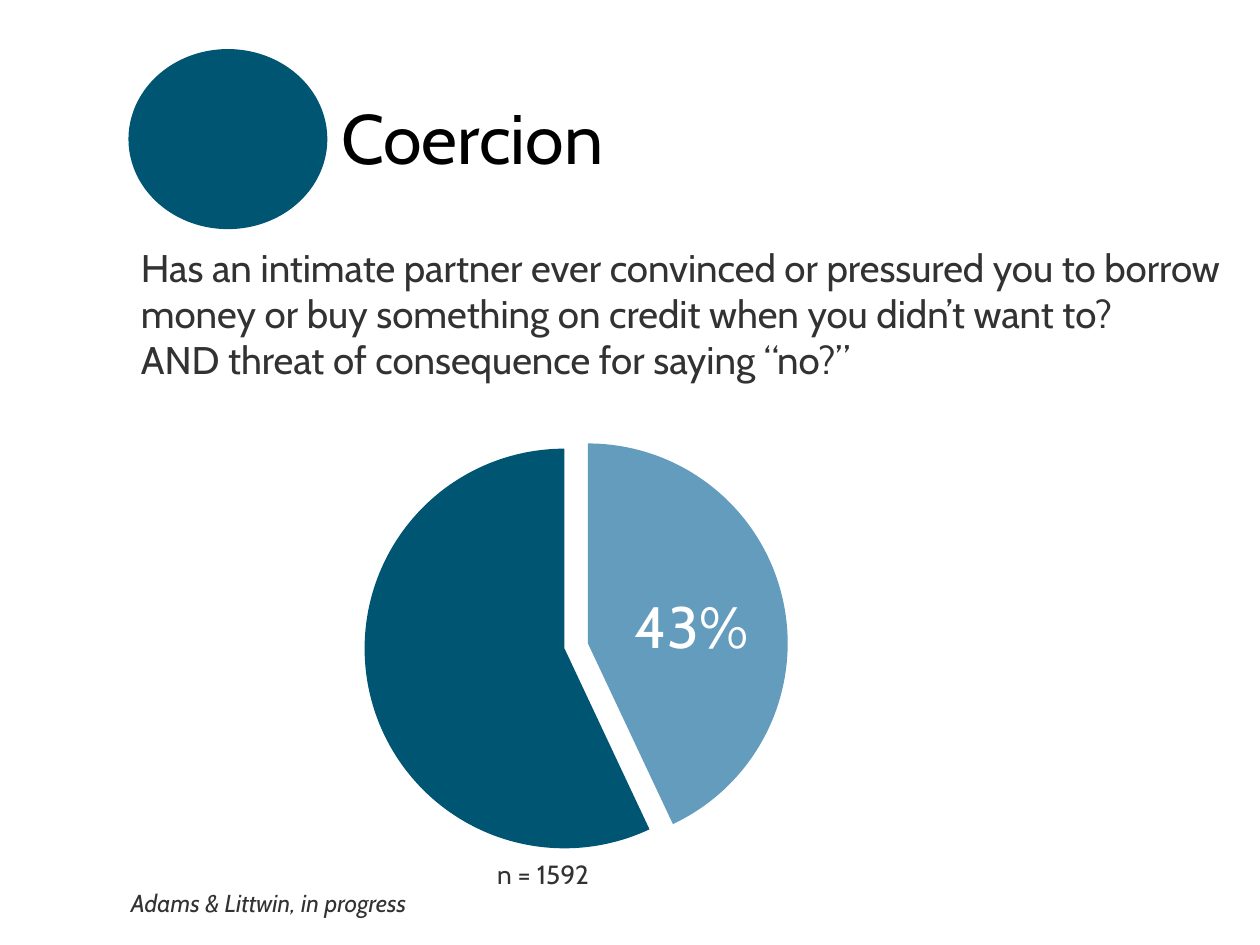
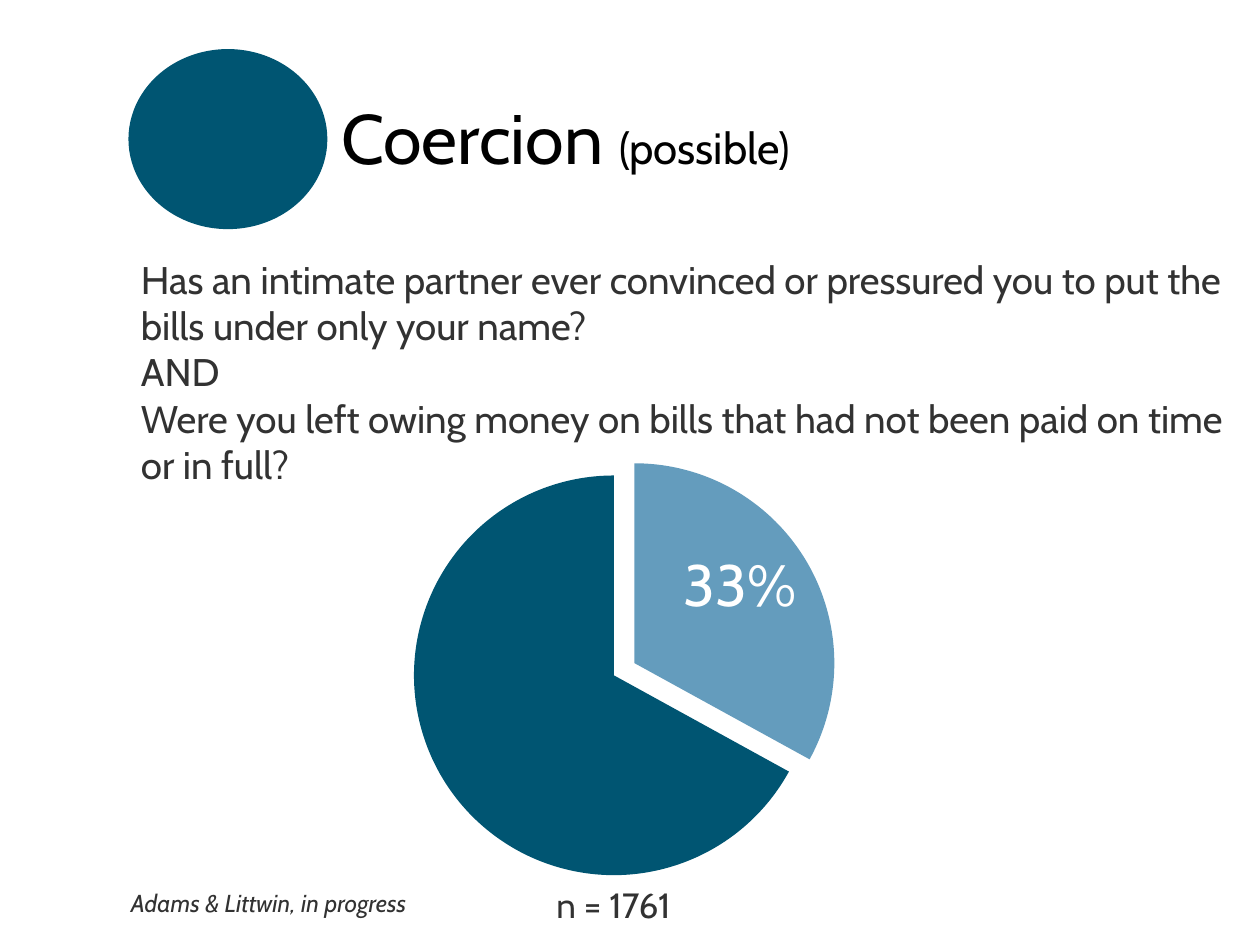
from lxml import etree
from pptx import Presentation
from pptx.chart import data
from pptx.dml import color
from pptx.enum import chart as charts, shapes, text
from pptx.oxml import parse_xml
from pptx.oxml import ns
from pptx.util import Cm, Pt

COLORS = {"circle": "005572", "slice": "649CBD", "title": "000000",
          "body": "323232", "label": "FFFFFF"}
FONT = "Cabin"
FRAME = {"word_wrap": True, "auto_size": text.MSO_AUTO_SIZE.NONE,
         "margin_left": Cm(0.25), "margin_right": Cm(0.25),
         "margin_top": Cm(0.13), "margin_bottom": Cm(0.13)}
HEADER_BOX = (2.59, 0.99, 20.57, 3.63)
SOURCE_BOX = (2.39, 17.78, 17.15, 0.86)
SOURCE = "Adams & Littwin, in progress"
EXPLOSION = 12
PLOT_SHARE = {"w": 0.585, "h": 0.92}

SLIDES = [
    {"title": [("Coercion", 40)],
     "question": ["Has an intimate partner ever convinced or pressured you to borrow "
                  "money or buy something on credit when you didn’t want to?",
                  "AND threat of consequence for saying “no?”"],
     "question_box": (2.59, 4.78, 22.33, 3.07),
     "chart_box": (4.95, 8.59, 13.79, 8.76),
     "percent": 43, "percent_offset": (6.91, 3.17),
     "sample": "n = 1592", "sample_size": 15, "sample_offset": (3.79, 8.58)},
    {"title": [("Coercion ", 40), ("(possible)", 25)],
     "question": ["Has an intimate partner ever convinced or pressured you to put the "
                  "bills under only your name?",
                  "AND",
                  "Were you left owing money on bills that had not been paid on time "
                  "or in full?"],
     "question_box": (2.59, 5.03, 22.33, 4.95),
     "chart_box": (5.89, 8.99, 13.79, 8.76),
     "percent": 33, "percent_offset": (6.94, 1.93),
     "sample": "n = 1761", "sample_size": 20, "sample_offset": (4.27, 8.69)},
]


def apply_format(target, values):
    """Set each named attribute of the target."""
    for name, value in values.items():
        setattr(target, name, value)


def place(shape, box):
    """Move a shape to a box given in centimetres."""
    apply_format(shape, dict(zip(("left", "top", "width", "height"), map(Cm, box))))


def fill_solid(fill, name):
    """Fill with a named colour."""
    fill.solid()
    fill.fore_color.rgb = color.RGBColor.from_string(COLORS[name])


def write(shape, paragraphs, color_name, align=text.PP_ALIGN.LEFT,
          anchor=text.MSO_ANCHOR.TOP, italic=False):
    """Write paragraphs, each a list of (words, size) runs."""
    frame = shape.text_frame
    apply_format(frame, {**FRAME, "vertical_anchor": anchor})
    for index, runs in enumerate(paragraphs):
        paragraph = frame.paragraphs[0] if index == 0 else frame.add_paragraph()
        apply_format(paragraph, {"alignment": align, "space_before": Pt(0)})
        for words, size in runs:
            run = paragraph.add_run()
            run.text = words
            apply_format(run.font, {"name": FONT, "size": Pt(size), "italic": italic})
            run.font.color.rgb = color.RGBColor.from_string(COLORS[color_name])


def add_text(slide, box, words, size, color_name, **options):
    """Add a one-line text box."""
    shape = slide.shapes.add_textbox(*map(Cm, box))
    write(shape, [[(words, size)]], color_name, **options)


def add_header(slide, box, title_runs):
    """Place the circle and, to its right, the title."""
    left, top, width, height = box
    circle_width = 4.01
    circle = slide.shapes.add_shape(shapes.MSO_SHAPE.OVAL,
                                    *map(Cm, (left, top, circle_width, height)))
    circle.shadow.inherit = False
    fill_solid(circle.fill, "circle")
    circle.line.fill.background()
    title = slide.shapes.title
    title_left = circle_width + 0.03
    place(title, (left + title_left, top + 0.79, width - title_left, 1.96))
    write(title, [title_runs], "title")


def add_question(slide, box, lines):
    """Fill the body placeholder with unbulleted lines."""
    body = slide.placeholders[1]
    place(body, box)
    write(body, [[(line, 22)] for line in lines], "body")
    for paragraph in body.text_frame.paragraphs:
        properties = paragraph._p.get_or_add_pPr()
        properties.set("marL", "0")
        properties.set("indent", "0")
        etree.SubElement(properties, ns.qn("a:buNone"))


def set_plot_layout(chart):
    """Centre the pie in the chart area."""
    shares = {"x": (1 - PLOT_SHARE["w"]) / 2, "y": (1 - PLOT_SHARE["h"]) / 2, **PLOT_SHARE}
    entries = "".join(f'<c:{key} val="{value:.3f}"/>' for key, value in shares.items())
    layout = parse_xml(
        f'<c:layout {ns.nsdecls("c")}><c:manualLayout><c:layoutTarget val="inner"/>'
        f'<c:xMode val="edge"/><c:yMode val="edge"/>{entries}</c:manualLayout></c:layout>')
    plot_area = chart._chartSpace.chart.plotArea
    for previous in plot_area.findall(ns.qn("c:layout")):
        plot_area.remove(previous)
    plot_area.insert(0, layout)


def add_pie(slide, box, content):
    """Place the pie with its percentage and sample size."""
    left, top = box[:2]
    percent = content["percent"]
    chart_data = data.CategoryChartData()
    chart_data.categories = ["1", "2"]
    chart_data.add_series("Series 1", (percent, 100 - percent))
    chart = slide.shapes.add_chart(charts.XL_CHART_TYPE.PIE, *map(Cm, box), chart_data).chart
    apply_format(chart, {"has_legend": False, "has_title": False})
    apply_format(chart.font, {"name": FONT, "size": Pt(10)})
    chart.font.color.rgb = color.RGBColor.from_string(COLORS["title"])
    plot = chart.plots[0]
    plot.vary_by_categories = True
    for index, name in enumerate(("slice", "circle")):
        point = plot.series[0].points[index]
        fill_solid(point.format.fill, name)
        point.format.line.fill.background()
    rest = plot.series[0]._element.findall(ns.qn("c:dPt"))[1]
    explosion = etree.Element(ns.qn("c:explosion"), val=str(EXPLOSION))
    rest.find(ns.qn("c:spPr")).addprevious(explosion)
    set_plot_layout(chart)

    labels = (
        ("percent_offset", (4.17, 1.68), f"{percent}%", 33.3, "label"),
        ("sample_offset", (4.42, 1.12), content["sample"], content["sample_size"], "body"),
    )
    for offset, size, words, font_size, color_name in labels:
        across, down = content[offset]
        add_text(slide, (left + across, top + down, *size), words, font_size, color_name,
                 align=text.PP_ALIGN.CENTER)


def build_slide(presentation, content):
    """Build one survey result slide."""
    slide = presentation.slides.add_slide(presentation.slide_layouts[1])
    add_question(slide, content["question_box"], content["question"])
    add_pie(slide, content["chart_box"], content)
    add_header(slide, HEADER_BOX, content["title"])
    add_text(slide, SOURCE_BOX, SOURCE, 14, "body", italic=True)


def main():
    """Build and save the presentation."""
    presentation = Presentation()
    apply_format(presentation, {"slide_width": Cm(25.4), "slide_height": Cm(19.05)})
    for content in SLIDES:
        build_slide(presentation, content)
    presentation.save("out.pptx")


if __name__ == "__main__":
    main()
